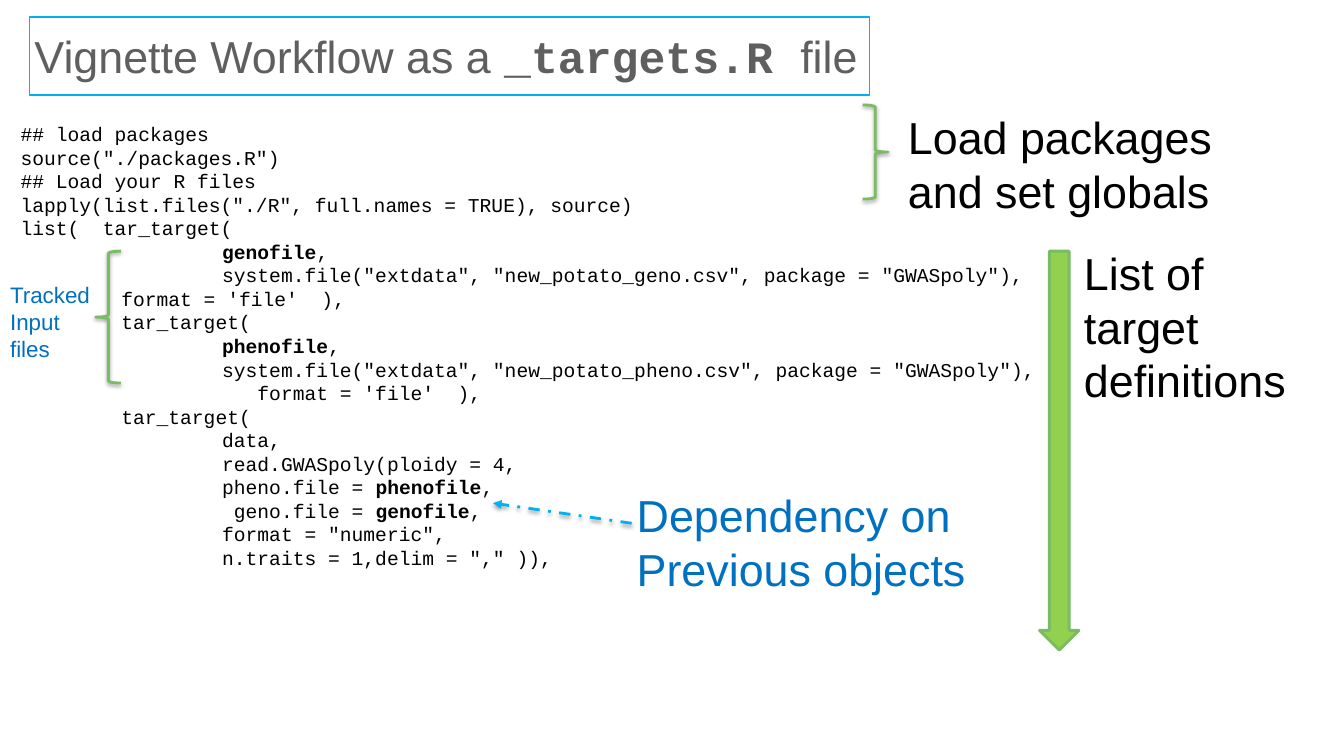
from dataclasses import dataclass

from lxml.etree import SubElement
from pptx import Presentation
from pptx.dml.color import RGBColor
from pptx.enum.dml import MSO_LINE
from pptx.enum.shapes import MSO_CONNECTOR, MSO_SHAPE
from pptx.enum.text import MSO_ANCHOR, PP_ALIGN
from pptx.oxml.ns import qn
from pptx.slide import Slide
from pptx.text.text import TextFrame
from pptx.util import Inches, Pt

BLACK = RGBColor(0x00, 0x00, 0x00)
GREY = RGBColor(0x5F, 0x5F, 0x5F)
BLUE = RGBColor(0x00, 0x70, 0xC0)
SKY = RGBColor(0x00, 0xB0, 0xF0)
GREEN = RGBColor(0x79, 0xBC, 0x64)
LIME = RGBColor(0x92, 0xD0, 0x50)

SANS, MONO = "Arial", "Courier New"
SLIDE_WIDTH, SLIDE_HEIGHT = Inches(13.33), Inches(7.5)
COLUMNS, ROWS = 160, 90
INSET = Inches(0.05)
TAB_WIDTH = Inches(1)
BOLD_MARK = "**"

TITLE = "Vignette Workflow as a **_targets.R **file"
TARGETS_SCRIPT = """## load packages
source("./packages.R")
## Load your R files
lapply(list.files("./R", full.names = TRUE), source)
list(  tar_target(
\t\t**genofile**,
\t\tsystem.file("extdata", "new_potato_geno.csv", package = "GWASpoly"),
\tformat = 'file'  ),
\ttar_target(
\t\t**phenofile**,
\t\tsystem.file("extdata", "new_potato_pheno.csv", package = "GWASpoly"),
\t\t   format = 'file'  ),
\ttar_target(
\t\tdata,
\t\tread.GWASpoly(ploidy = 4,
\t\tpheno.file = **phenofile**,
\t\t geno.file = **genofile**,
\t\tformat = "numeric",
\t\tn.traits = 1,delim = "," )),"""


@dataclass(frozen=True)
class Area:
    """A rectangle in grid columns and rows."""
    column: float
    row: float
    columns: float
    rows: float

    def box(self) -> tuple[int, int, int, int]:
        return (across(self.column), down(self.row),
                across(self.columns), down(self.rows))


@dataclass(frozen=True)
class Label:
    text: str
    area: Area
    size: int = 32
    color: RGBColor = BLACK
    font: str = SANS
    wrap: bool = False


@dataclass(frozen=True)
class Marker:
    """A green shape that points out a part of the script."""
    kind: MSO_SHAPE
    area: Area
    rotation: int = 0
    fill: RGBColor | None = None
    shadow: bool = True


LABELS = [
    Label(TARGETS_SCRIPT, Area(1.85, 13.95, 124, 55), 14, font=MONO, wrap=True),
    Label("Load packages\nand set globals", Area(107.5, 12.5, 39.1, 14.2)),
    Label("List of target definitions", Area(128.45, 28.65, 27, 20.6), wrap=True),
    Label("Tracked\nInput\nfiles", Area(0.6, 32.9, 10.9, 10.9), 16, BLUE),
    Label("Dependency on\nPrevious objects", Area(75.2, 57.5, 40.7, 14.2),
          color=BLUE),
]
MARKERS = [
    Marker(MSO_SHAPE.RIGHT_BRACE, Area(102.7, 12.5, 3, 11.2)),
    Marker(MSO_SHAPE.DOWN_ARROW, Area(123.75, 29.9, 4.7, 47.5),
           fill=LIME, shadow=False),
    Marker(MSO_SHAPE.RIGHT_BRACE, Area(11.4, 29.9, 3, 15.7), rotation=180),
]


def across(columns: float) -> int:
    return round(SLIDE_WIDTH * columns / COLUMNS)


def down(rows: float) -> int:
    return round(SLIDE_HEIGHT * rows / ROWS)


def write_text(frame: TextFrame, text: str, *, size: int, color: RGBColor,
               font: str = SANS, bold_font: str = MONO, wrap: bool = True,
               anchor: MSO_ANCHOR = MSO_ANCHOR.TOP) -> None:
    """Write one paragraph per line; text between bold marks is bold."""
    frame.word_wrap = wrap
    frame.vertical_anchor = anchor
    frame.margin_left = frame.margin_right = INSET
    frame.margin_top = frame.margin_bottom = INSET
    for index, line in enumerate(text.split("\n")):
        paragraph = frame.add_paragraph() if index else frame.paragraphs[0]
        paragraph.alignment = PP_ALIGN.LEFT
        properties = paragraph._p.get_or_add_pPr()
        properties.set("defTabSz", str(TAB_WIDTH))
        if line.startswith("\t"):
            stops = SubElement(properties, qn("a:tabLst"))
            for stop in (1, 2):
                SubElement(stops, qn("a:tab"), pos=str(stop * TAB_WIDTH),
                           algn="l")
        for part, words in enumerate(line.split(BOLD_MARK)):
            bold = part % 2 == 1
            run = paragraph.add_run()
            run.text = words
            run.font.size = Pt(size)
            run.font.name = bold_font if bold else font
            run.font.bold = bold
            run.font.color.rgb = color


def add_shadow(properties) -> None:
    """Append a soft downward shadow to finished shape properties."""
    effects = properties.find(qn("a:effectLst"))
    if effects is None:
        effects = SubElement(properties, qn("a:effectLst"))
    shadow = SubElement(effects, qn("a:outerShdw"), blurRad=str(Pt(3)),
                        dist=str(Pt(1.6)), dir="5400000", rotWithShape="0")
    black = SubElement(shadow, qn("a:srgbClr"), val=str(BLACK))
    SubElement(black, qn("a:alpha"), val="38000")


def add_title(slide: Slide) -> None:
    title = slide.shapes.add_shape(MSO_SHAPE.RECTANGLE,
                                   *Area(3.5, 2.05, 100, 9.25).box())
    title.shadow.inherit = False
    title.fill.background()
    title.line.color.rgb = SKY
    title.line.width = Pt(1)
    write_text(title.text_frame, TITLE, size=32, color=GREY,
               anchor=MSO_ANCHOR.MIDDLE)


def add_label(slide: Slide, label: Label) -> None:
    frame = slide.shapes.add_textbox(*label.area.box()).text_frame
    write_text(frame, label.text, size=label.size, color=label.color,
               font=label.font, bold_font=label.font, wrap=label.wrap)


def add_marker(slide: Slide, marker: Marker) -> None:
    shape = slide.shapes.add_shape(marker.kind, *marker.area.box())
    shape.rotation = marker.rotation
    shape.shadow.inherit = False
    if marker.fill is None:
        shape.fill.background()
    else:
        shape.fill.solid()
        shape.fill.fore_color.rgb = marker.fill
    shape.line.color.rgb = GREEN
    shape.line.width = Pt(2)
    if marker.shadow:
        add_shadow(shape._element.spPr)


def add_dependency_arrow(slide: Slide) -> None:
    arrow = slide.shapes.add_connector(
        MSO_CONNECTOR.STRAIGHT,
        across(75.2), down(62.3), across(58.7), down(59.9))
    arrow.line.color.rgb = SKY
    arrow.line.width = Pt(2)
    arrow.line.dash_style = MSO_LINE.DASH_DOT
    properties = arrow._element.spPr
    SubElement(properties.find(qn("a:ln")), qn("a:tailEnd"), type="triangle")
    add_shadow(properties)


def main() -> None:
    deck = Presentation()
    deck.slide_width, deck.slide_height = SLIDE_WIDTH, SLIDE_HEIGHT
    slide = deck.slides.add_slide(deck.slide_layouts[6])
    add_title(slide)
    for label in LABELS:
        add_label(slide, label)
    for marker in MARKERS:
        add_marker(slide, marker)
    add_dependency_arrow(slide)
    deck.save("out.pptx")


if __name__ == "__main__":
    main()
